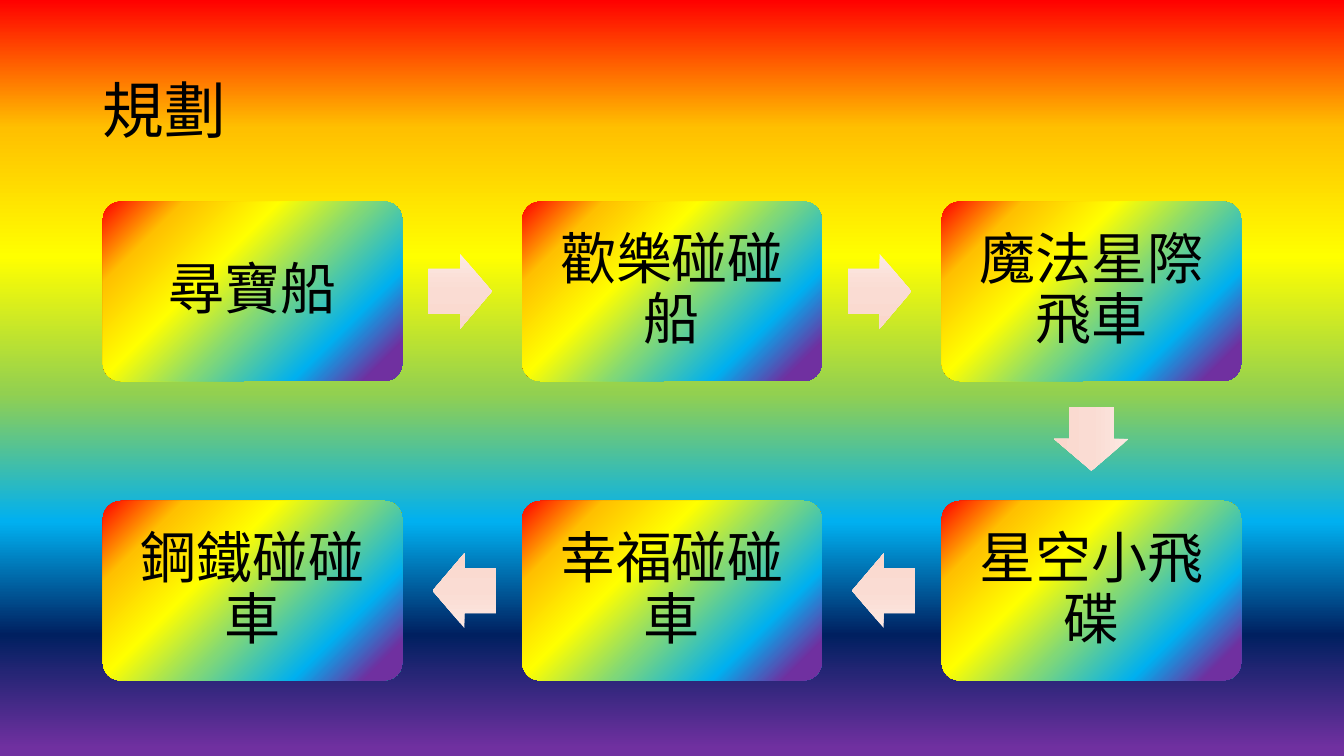
from lxml import etree
from pptx import Presentation
from pptx.dml.color import RGBColor
from pptx.enum.shapes import MSO_SHAPE
from pptx.enum.text import MSO_ANCHOR, PP_ALIGN
from pptx.oxml.ns import qn
from pptx.util import Inches, Pt

ROUND_RECT, ARROW = MSO_SHAPE.ROUNDED_RECTANGLE, MSO_SHAPE.RIGHT_ARROW
MIDDLE = MSO_ANCHOR.MIDDLE
LEFT, CENTER = PP_ALIGN.LEFT, PP_ALIGN.CENTER

SKY = [(0, "FF0000"), (17, "FFC000"), (34, "FFFF00"), (52, "92D050"),
       (69, "00B0F0"), (84, "002060"), (99, "7030A0")]
RAINBOW = [(0, "FF0000"), (17, "FFC000"), (37, "FFFF00"), (56, "80D878"),
           (77, "00B0F0"), (92, "7030A0")]
BLUSH = [(0, "FCE8E2"), (50, "FADCD3"), (100, "FAD7CC")]

RIDES = ["尋寶船", "歡樂碰碰船", "魔法星際飛車", "星空小飛碟", "幸福碰碰車", "鋼鐵碰碰車"]
COLUMNS = 3
GRID_X, GRID_Y, STEP_X, STEP_Y = 1.02, 2, 4.16, 2.97
BOX_W, BOX_H = 2.97, 1.78
ARROW_W, ARROW_H, ARROW_PULL = 0.63, 0.74, 0.02
ROTATION = {(1, 0): 0, (0, 1): 90, (-1, 0): 180}


def color(hex_string):
    return RGBColor.from_string(hex_string)


def gradient(fill, element, stops, angle):
    """Fill with (percent, colour) stops; angle in degrees, clockwise."""
    fill.gradient()
    fill.gradient_angle = 360 - angle
    gs_list = element.find(".//" + qn("a:gsLst"))
    for gs in list(gs_list):
        gs_list.remove(gs)
    for percent, hex_string in stops:
        gs = etree.SubElement(gs_list, qn("a:gs"), pos=str(percent * 1000))
        etree.SubElement(gs, qn("a:srgbClr"), val=hex_string)


class Deck:
    text_color = "000000"
    line_spacing = 0.9

    def __init__(self, prs):
        self.s = prs.slides.add_slide(prs.slide_layouts[6])

    def background(self, stops):
        gradient(self.s.background.fill, self.s.element, stops, 90)

    def shape(self, kind, x, y, w, h, adjustments, stops, angle):
        sp = self.s.shapes.add_shape(kind, Inches(x), Inches(y), Inches(w), Inches(h))
        sp.shadow.inherit = False
        sp.line.fill.background()
        for i, value in enumerate(adjustments):
            sp.adjustments[i] = value
        gradient(sp.fill, sp.element, stops, angle)
        return sp

    def text(self, tf, text, size, font, align):
        tf.word_wrap = True
        tf.vertical_anchor = MIDDLE
        p = tf.paragraphs[0]
        p.alignment = align
        p.line_spacing = self.line_spacing
        r = p.add_run()
        r.text = text
        r.font.size = Pt(size)
        r.font.name = font
        r.font.color.rgb = color(self.text_color)

    def title(self, text):
        box = self.s.shapes.add_textbox(Inches(0.92), Inches(0.4), Inches(11.5), Inches(1.45))
        self.text(box.text_frame, text, 44, "Noto Sans CJK JP", LEFT)

    def ride(self, text, x, y):
        sp = self.shape(ROUND_RECT, x, y, BOX_W, BOX_H, [0.1], RAINBOW, 45)
        tf = sp.text_frame
        tf.margin_left = tf.margin_right = tf.margin_top = tf.margin_bottom = Inches(0.17)
        self.text(tf, text, 40, "Calibri", CENTER)

    def arrow(self, cx, cy, rotation):
        sp = self.shape(ARROW, cx - ARROW_W / 2, cy - ARROW_H / 2, ARROW_W, ARROW_H,
                        [0.6, 0.5], BLUSH, 90)
        sp.rotation = rotation


def snake_cell(i):
    """Column and row of step i, with every second row running backwards."""
    row, col = divmod(i, COLUMNS)
    return (COLUMNS - 1 - col if row % 2 else col), row


def main():
    prs = Presentation()
    prs.slide_width, prs.slide_height = Inches(13.33), Inches(7.5)
    deck = Deck(prs)
    deck.background(SKY)
    deck.title("規劃")
    for i, name in enumerate(RIDES):
        col, row = snake_cell(i)
        x, y = GRID_X + col * STEP_X, GRID_Y + row * STEP_Y
        deck.ride(name, x, y)
        if i + 1 < len(RIDES):
            next_col, next_row = snake_cell(i + 1)
            dx, dy = next_col - col, next_row - row
            deck.arrow(x + BOX_W / 2 + dx * (STEP_X / 2 - ARROW_PULL),
                       y + BOX_H / 2 + dy * (STEP_Y / 2 - ARROW_PULL),
                       ROTATION[dx, dy])
    prs.save("out.pptx")


if __name__ == "__main__":
    main()
